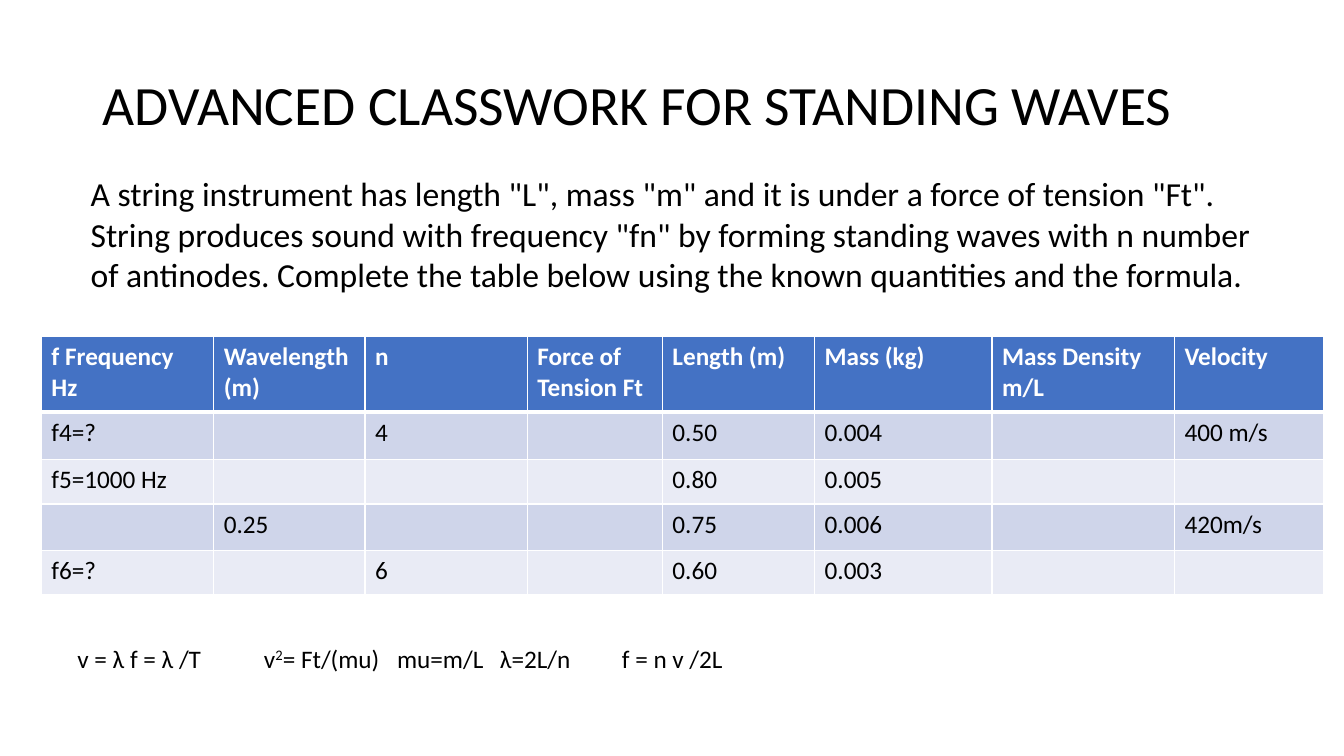
from pptx import Presentation
from pptx.dml.color import RGBColor
from pptx.enum import text
from pptx.oxml import parse_xml
from pptx.oxml.ns import nsdecls
from pptx.util import Inches, Pt

TITLE = "ADVANCED CLASSWORK FOR STANDING WAVES"
TASK = (
    'A string instrument has length "L", mass "m" and it is under a force of tension "Ft". '
    'String produces sound with frequency "fn" by forming standing waves with n number of '
    "antinodes. Complete the table below using the known quantities and the formula."
)
ROWS = [
    ("f Frequency\nHz", "Wavelength\n(m)", "n", "Force of Tension Ft",
     "Length (m)", "Mass (kg)", "Mass Density m/L", "Velocity"),
    ("f4=?", "", "4", "", "0.50", "0.004", "", "400 m/s"),
    ("f5=1000 Hz", "", "", "", "0.80", "0.005", "", ""),
    ("", "0.25", "", "", "0.75", "0.006", "", "420m/s"),
    ("f6=?", "", "6", "", "0.60", "0.003", "", ""),
]
FORMULAS = [
    ("v = λ f = λ /T\tv", None),
    ("2", 30000),
    ("= Ft/(mu)\tmu=m/L\tλ=2L/n\tf = n v /2L", None),
]
FORMULA_TABS = (1.85, 3.17, 4.19, 5.4)

TITLE_BOX = (0.92, 0.4, 11.5, 1.33)
TASK_BOX = (0.8, 1.67, 11.95, 1.31)
TABLE_BOX = (0.41, 3.34, 12.72, 2.56)
FORMULA_BOX = (0.67, 6.33, 9.66, 0.71)
COLUMN_WIDTHS = (1.71, 1.5, 1.61, 1.34, 1.51, 1.76, 1.81, 1.48)
ROW_HEIGHTS = (0.75, 0.47, 0.44, 0.46, 0.44)

THEME = {
    "font": "Calibri",
    "ink": "000000",
    "white": "FFFFFF",
    "header": "4472C4",
    "bands": ("CFD5EA", "E9EBF5"),
    "title": 39.6,
    "task": 24,
    "small": 18,
    "line": 1,
    "header_line": 3,
}


def style(paragraph, size, color="ink", bold=False):
    values = {"name": THEME["font"], "size": Pt(THEME[size]), "bold": bold}
    for run in paragraph.runs:
        for name, value in values.items():
            setattr(run.font, name, value)
        run.font.color.rgb = RGBColor.from_string(THEME[color])


def add_text(slide, box):
    frame = slide.shapes.add_textbox(*map(Inches, box)).text_frame
    frame.word_wrap = True
    return frame.paragraphs[0]


def add_title(slide):
    title = slide.shapes.title
    for name, value in zip(("left", "top", "width", "height"), TITLE_BOX):
        setattr(title, name, Inches(value))
    title.text_frame.text = TITLE
    title.text_frame.vertical_anchor = text.MSO_ANCHOR.MIDDLE
    paragraph = title.text_frame.paragraphs[0]
    paragraph.alignment = text.PP_ALIGN.LEFT
    paragraph.line_spacing = 0.9
    style(paragraph, "title")


def add_borders(cell, row):
    thick_side = {0: "B", 1: "T"}.get(row)
    for side in "LRTB":
        width = Pt(THEME["header_line" if side == thick_side else "line"])
        cell._tc.get_or_add_tcPr().append(parse_xml(
            f'<a:ln{side} {nsdecls("a")} w="{width}"><a:solidFill>'
            f'<a:srgbClr val="{THEME["white"]}"/></a:solidFill></a:ln{side}>'
        ))


def add_table(slide):
    table = slide.shapes.add_table(
        len(ROWS), len(COLUMN_WIDTHS), *map(Inches, TABLE_BOX)
    ).table
    for column, width in zip(table.columns, COLUMN_WIDTHS):
        column.width = Inches(width)
    for row, (values, height) in enumerate(zip(ROWS, ROW_HEIGHTS)):
        table.rows[row].height = Inches(height)
        header = row == 0
        fill = THEME["header"] if header else THEME["bands"][(row - 1) % 2]
        for column, value in enumerate(values):
            cell = table.cell(row, column)
            cell.text = value
            add_borders(cell, row)
            cell.fill.solid()
            cell.fill.fore_color.rgb = RGBColor.from_string(fill)
            for paragraph in cell.text_frame.paragraphs:
                style(paragraph, "small", "white" if header else "ink", header)


def add_formulas(slide):
    paragraph = add_text(slide, FORMULA_BOX)
    stops = "".join(f'<a:tab pos="{Inches(stop)}" algn="l"/>' for stop in FORMULA_TABS)
    paragraph._p.get_or_add_pPr().append(
        parse_xml(f'<a:tabLst {nsdecls("a")}>{stops}</a:tabLst>')
    )
    for value, baseline in FORMULAS:
        run = paragraph.add_run()
        run.text = value
        if baseline:
            run._r.get_or_add_rPr().set("baseline", str(baseline))
    style(paragraph, "small")


def main():
    """Build the standing waves classwork slide."""
    presentation = Presentation()
    presentation.slide_width = Inches(13.33)
    presentation.slide_height = Inches(7.5)
    slide = presentation.slides.add_slide(presentation.slide_layouts[5])
    add_title(slide)
    task = add_text(slide, TASK_BOX)
    task.text = TASK
    style(task, "task")
    add_table(slide)
    add_formulas(slide)
    presentation.save("out.pptx")


if __name__ == "__main__":
    main()
